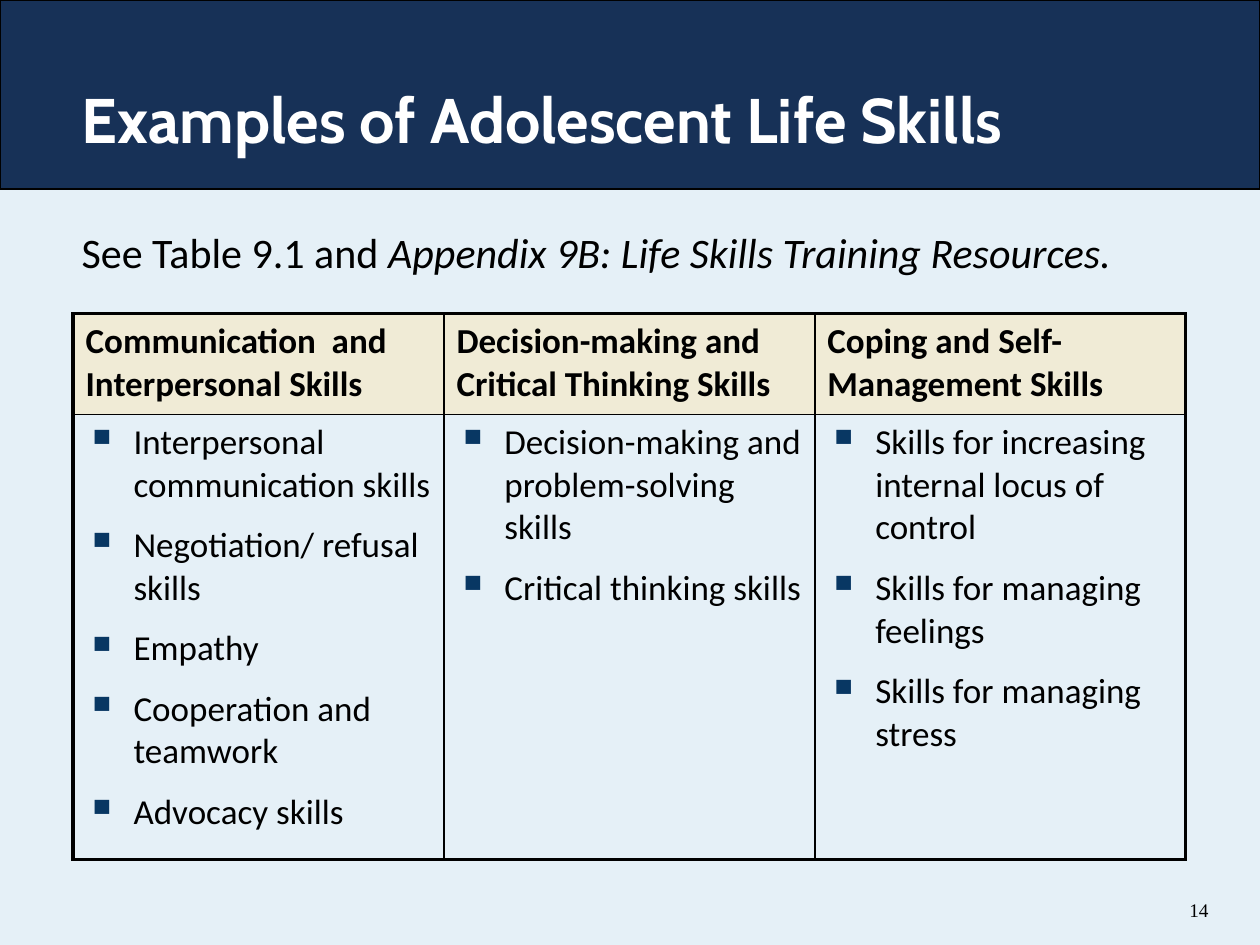
from dataclasses import dataclass

from lxml.etree import SubElement
from pptx import Presentation
from pptx.dml.color import RGBColor
from pptx.enum.shapes import MSO_SHAPE
from pptx.enum.text import MSO_ANCHOR, PP_ALIGN
from pptx.oxml.ns import qn
from pptx.util import Inches, Pt


@dataclass(frozen=True)
class Theme:
    background: str = "E5F0F7"
    banner: str = "173157"
    header: str = "F0EBD6"
    bullet: str = "083763"
    black: str = "000000"
    white: str = "FFFFFF"
    title_font: str = "Cabin"
    body_font: str = "Calibri"
    number_font: str = "Times New Roman"
    title_size: float = 36
    intro_size: float = 24
    table_size: float = 20
    number_size: float = 11
    outer_line: float = 2.25
    inner_line: float = 1
    banner_line: float = 0.75
    paragraph_gap: float = 10


THEME = Theme()

SKILLS = {
    "Communication  and Interpersonal Skills": [
        "Interpersonal communication skills",
        "Negotiation/ refusal skills",
        "Empathy",
        "Cooperation and teamwork",
        "Advocacy skills",
    ],
    "Decision-making and Critical Thinking Skills": [
        "Decision-making and problem-solving skills",
        "Critical thinking skills",
    ],
    "Coping and Self-Management Skills": [
        "Skills for increasing internal locus of control",
        "Skills for managing feelings",
        "Skills for managing stress",
    ],
}


def text_format(name, size, color=THEME.black, **extra):
    return {"name": name, "size": Pt(size), "color": color, **extra}


def add_run(paragraph, text, values):
    run = paragraph.add_run()
    run.text = text
    for key, value in values.items():
        if key == "color":
            run.font.color.rgb = RGBColor.from_string(value)
        else:
            setattr(run.font, key, value)


def add_text(slide, box, runs, alignment=PP_ALIGN.LEFT, anchor=MSO_ANCHOR.TOP):
    frame = slide.shapes.add_textbox(*map(Inches, box)).text_frame
    frame.word_wrap = True
    frame.vertical_anchor = anchor
    paragraph = frame.paragraphs[0]
    paragraph.alignment = alignment
    for text, values in runs:
        add_run(paragraph, text, values)


def add_banner(slide):
    banner = slide.shapes.add_shape(
        MSO_SHAPE.RECTANGLE, 0, 0, Inches(10), Inches(1.5))
    banner.shadow.inherit = False
    banner.fill.solid()
    banner.fill.fore_color.rgb = RGBColor.from_string(THEME.banner)
    banner.line.color.rgb = RGBColor.from_string(THEME.black)
    banner.line.width = Pt(THEME.banner_line)


def set_bullet(paragraph):
    properties = paragraph._p.get_or_add_pPr()
    properties.set("marL", str(Inches(0.38)))
    properties.set("indent", str(-Inches(0.38)))
    color = SubElement(properties, qn("a:buClr"))
    SubElement(color, qn("a:srgbClr"), val=THEME.bullet)
    SubElement(properties, qn("a:buSzPct"), val="125000")
    SubElement(properties, qn("a:buChar"), char="▪")


def set_borders(cell, outer_sides):
    properties = cell._tc.get_or_add_tcPr()
    for side in "LRTB":
        width = THEME.outer_line if side in outer_sides else THEME.inner_line
        line = SubElement(properties, qn(f"a:ln{side}"), w=str(Pt(width)))
        fill = SubElement(line, qn("a:solidFill"))
        SubElement(fill, qn("a:srgbClr"), val=THEME.black)


def fill_cell(cell, texts, values, bulleted):
    frame = cell.text_frame
    for index, text in enumerate(texts):
        paragraph = frame.add_paragraph() if index else frame.paragraphs[0]
        if index:
            paragraph.space_before = Pt(THEME.paragraph_gap)
        if bulleted:
            set_bullet(paragraph)
        add_run(paragraph, text, values)


def add_skills_table(slide):
    count = len(SKILLS)
    table = slide.shapes.add_table(
        2, count, *map(Inches, (0.58, 2.49, 8.83, 4.33))).table
    table.first_row = table.horz_banding = False
    table.rows[0].height = Inches(0.8)
    table.rows[1].height = Inches(3.53)
    heading_format = text_format(THEME.body_font, THEME.table_size, bold=True)
    item_format = text_format(THEME.body_font, THEME.table_size, bold=False)

    for column, (heading, items) in enumerate(SKILLS.items()):
        edges = ("L" if column == 0 else "") + ("R" if column == count - 1 else "")
        # Heading cell
        cell = table.cell(0, column)
        set_borders(cell, edges + "T")
        cell.fill.solid()
        cell.fill.fore_color.rgb = RGBColor.from_string(THEME.header)
        fill_cell(cell, [heading], heading_format, bulleted=False)
        # List cell
        cell = table.cell(1, column)
        set_borders(cell, edges + "B")
        cell.fill.background()
        fill_cell(cell, items, item_format, bulleted=True)


def main():
    presentation = Presentation()
    presentation.slide_width = Inches(10)
    presentation.slide_height = Inches(7.5)
    slide = presentation.slides.add_slide(presentation.slide_layouts[6])
    slide.background.fill.solid()
    slide.background.fill.fore_color.rgb = RGBColor.from_string(THEME.background)

    # Banner and title
    add_banner(slide)
    title_format = text_format(
        THEME.title_font, THEME.title_size, THEME.white, bold=True)
    add_text(slide, (0.55, 0.59, 9.04, 1.16),
             [("Examples of Adolescent Life Skills", title_format)])

    # Introduction and table
    intro_format = text_format(THEME.body_font, THEME.intro_size)
    add_text(slide, (0.55, 1.75, 8.83, 0.5), [
        ("See Table 9.1 and ", intro_format),
        ("Appendix 9B: Life Skills Training Resources.",
         {**intro_format, "italic": True}),
    ])
    add_skills_table(slide)

    # Slide number
    add_text(slide, (9.08, 7.02, 0.61, 0.4),
             [("14", text_format(THEME.number_font, THEME.number_size))],
             PP_ALIGN.RIGHT, MSO_ANCHOR.MIDDLE)

    presentation.save("out.pptx")


if __name__ == "__main__":
    main()
